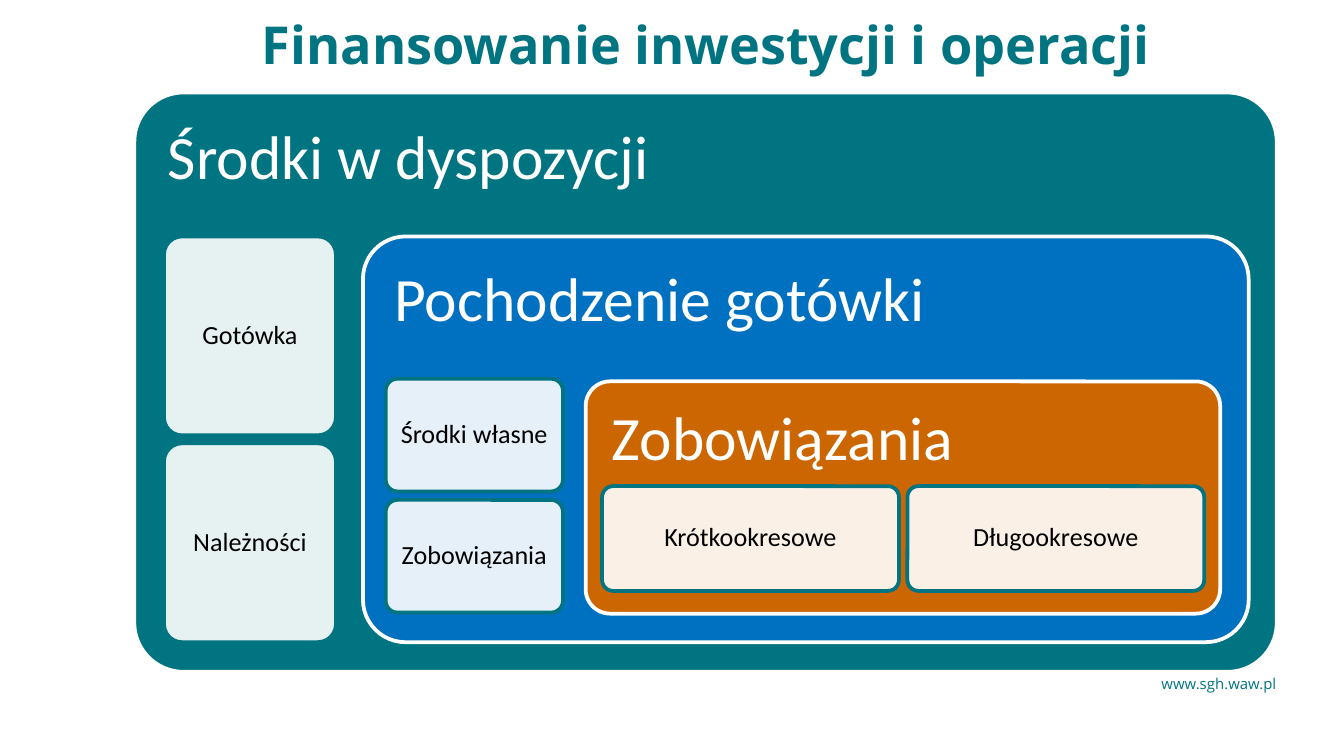
from dataclasses import dataclass

from lxml.etree import SubElement
from pptx import Presentation
from pptx.dml.color import RGBColor as RGB
from pptx.enum.shapes import MSO_SHAPE as Shape
from pptx.enum.text import MSO_ANCHOR as Anchor, MSO_AUTO_SIZE as AutoSize, PP_ALIGN as Align
from pptx.oxml.ns import qn
from pptx.util import Cm, Pt


@dataclass(frozen=True)
class Theme:
    teal: RGB = RGB(0x00, 0x74, 0x81)
    blue: RGB = RGB(0x00, 0x70, 0xC0)
    orange: RGB = RGB(0xCC, 0x66, 0x00)
    white: RGB = RGB(0xFF, 0xFF, 0xFF)
    black: RGB = RGB(0x00, 0x00, 0x00)
    brand_font: str = "Open Sans"
    diagram_font: str = "Calibri"
    title_size: int = 28
    panel_size: int = 33
    card_size: int = 14
    footer_size: int = 8
    border: int = 2
    card_opacity: int = 90


@dataclass(frozen=True)
class Box:
    """Position and size in centimetres."""
    left: float
    top: float
    width: float
    height: float

    def lengths(self) -> tuple:
        return Cm(self.left), Cm(self.top), Cm(self.width), Cm(self.height)

    def shifted(self, right: float, down: float) -> "Box":
        return Box(self.left + right, self.top + down, self.width, self.height)


@dataclass(frozen=True)
class Panel:
    """A coloured panel with a heading and a row or column of cards."""
    heading: str
    box: Box
    fill: RGB
    rounding: float
    cards: tuple
    first_card: Box
    step: tuple


THEME = Theme()

PANELS = (
    Panel("Środki w dyspozycji", Box(2.54, 1.75, 21.59, 10.95), THEME.teal, 0.085,
          ("Gotówka", "Należności"), Box(3.1, 4.47, 3.25, 3.76), (0, 3.91)),
    Panel("Pochodzenie gotówki", Box(6.86, 4.47, 16.74, 7.67), THEME.blue, 0.105,
          ("Środki własne", "Zobowiązania"), Box(7.29, 7.16, 3.35, 2.13), (0, 2.29)),
    Panel("Zobowiązania", Box(11.07, 7.21, 11.99, 4.39), THEME.orange, 0.105,
          ("Krótkookresowe", "Długookresowe"), Box(11.38, 9.19, 5.61, 1.98), (5.77, 0)),
)


def write(frame, text: str, font: str, size: int, color: RGB,
          align=Align.LEFT, anchor=Anchor.TOP, inset: float = 0,
          bold: bool = False, wrap: bool = True) -> None:
    frame.text = text
    frame.word_wrap = wrap
    frame.auto_size = AutoSize.NONE
    frame.vertical_anchor = anchor
    frame.margin_left = frame.margin_right = Cm(inset)
    frame.margin_top = frame.margin_bottom = Cm(inset)
    paragraph = frame.paragraphs[0]
    paragraph.alignment = align
    for run in paragraph.runs:
        run.font.name = font
        run.font.size = Pt(size)
        run.font.bold = bold
        run.font.color.rgb = color


def add_rounded(slide, box: Box, rounding: float, fill: RGB, border: RGB):
    shape = slide.shapes.add_shape(Shape.ROUNDED_RECTANGLE, *box.lengths())
    shape.adjustments[0] = rounding
    shape.shadow.inherit = False
    shape.fill.solid()
    shape.fill.fore_color.rgb = fill
    shape.line.color.rgb = border
    shape.line.width = Pt(THEME.border)
    return shape


def add_card(slide, label: str, box: Box) -> None:
    card = add_rounded(slide, box, 0.105, THEME.white, THEME.teal)
    color = card.fill._xPr.find(f"{qn('a:solidFill')}/{qn('a:srgbClr')}")
    SubElement(color, qn("a:alpha"), val=str(THEME.card_opacity * 1000))
    write(card.text_frame, label, THEME.diagram_font, THEME.card_size, THEME.black,
          Align.CENTER, Anchor.MIDDLE, inset=0.15)
    card.text_frame.paragraphs[0].line_spacing = 0.9


def add_panel(slide, panel: Panel) -> None:
    shape = add_rounded(slide, panel.box, panel.rounding, panel.fill, THEME.white)
    write(shape.text_frame, panel.heading, THEME.diagram_font, THEME.panel_size,
          THEME.white, inset=0.36)
    shape.text_frame.paragraphs[0].line_spacing = 0.9
    right, down = panel.step
    for index, label in enumerate(panel.cards):
        add_card(slide, label, panel.first_card.shifted(index * right, index * down))


def main() -> None:
    deck = Presentation()
    deck.slide_width, deck.slide_height = Cm(25.4), Cm(14.29)
    slide = deck.slides.add_slide(deck.slide_layouts[5])

    # Title
    title = slide.shapes.title
    title.left, title.top, title.width, title.height = Box(2.54, 0.23, 21.59, 1.88).lengths()
    write(title.text_frame, "Finansowanie inwestycji i operacji", THEME.brand_font,
          THEME.title_size, THEME.teal, Align.CENTER, bold=True)

    # Nested panels, from the outermost inwards
    for panel in PANELS:
        add_panel(slide, panel)

    # Web address under the diagram
    footer = slide.shapes.add_textbox(*Box(21.95, 12.75, 2.21, 0.33).lengths())
    write(footer.text_frame, "www.sgh.waw.pl", THEME.brand_font, THEME.footer_size,
          THEME.teal, wrap=False)

    deck.save("out.pptx")


if __name__ == "__main__":
    main()
